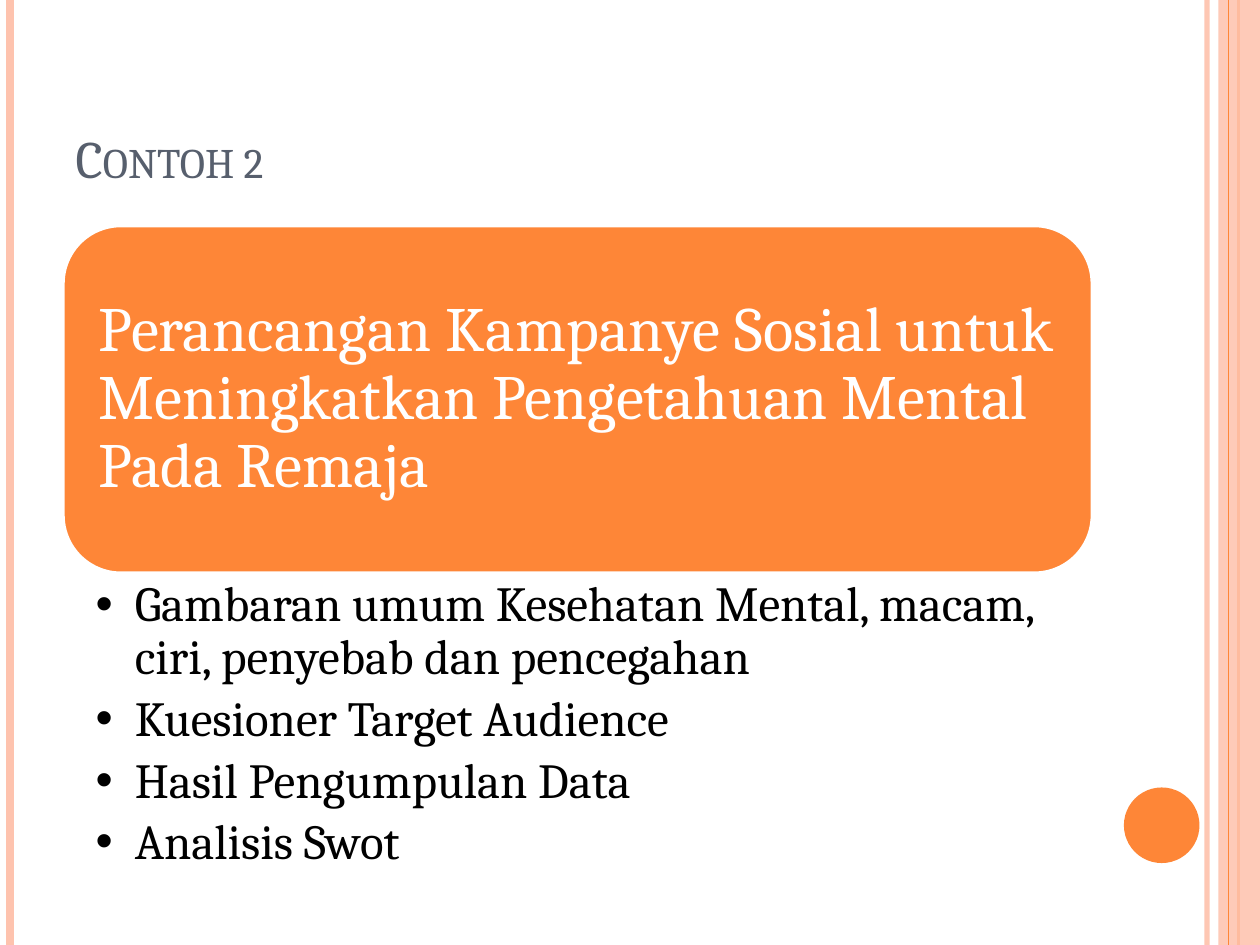
from lxml import etree
from pptx import Presentation
from pptx.dml.color import RGBColor
from pptx.enum import shapes, text
from pptx.oxml.ns import qn
from pptx.util import Inches, Pt

ORANGE = RGBColor(0xFE, 0x86, 0x37)
PEACH = RGBColor(0xFE, 0xC3, 0xAE)
SLATE = RGBColor(0x57, 0x5F, 0x6D)
WHITE = RGBColor(0xFF, 0xFF, 0xFF)
BLACK = RGBColor(0, 0, 0)

TITLE = "Contoh 2"
TOPIC = "Perancangan Kampanye Sosial untuk Meningkatkan Pengetahuan Mental Pada Remaja"
POINTS = [
    "Gambaran umum Kesehatan Mental, macam, ciri, penyebab dan pencegahan",
    "Kuesioner Target Audience",
    "Hasil Pengumpulan Data",
    "Analisis Swot",
]
LEFT, WIDTH = 0.5, 8.17

prs = Presentation()
prs.slide_width, prs.slide_height = Inches(10), Inches(7.5)
slide = prs.slides.add_slide(prs.slide_layouts[1])


def set_alpha(fill_owner, percent):
    """Make the solid colour inside the shape's fill or line partly transparent."""
    color = fill_owner.find(".//" + qn("a:srgbClr"))
    etree.SubElement(color, qn("a:alpha")).set("val", str(percent * 1000))


def write(sp, lines, size, color, anchor, insets, **para_format):
    """Fill a shape with left-aligned paragraphs of one style."""
    tf = sp.text_frame
    frame = dict(word_wrap=True, auto_size=text.MSO_AUTO_SIZE.NONE, vertical_anchor=anchor)
    sides = ("margin_left", "margin_top", "margin_right", "margin_bottom")
    frame.update(zip(sides, map(Inches, insets)))
    for name, value in frame.items():
        setattr(tf, name, value)
    tf.text = "\n".join(lines)
    for p in tf.paragraphs:
        para = dict(alignment=text.PP_ALIGN.LEFT, space_before=Pt(0), **para_format)
        for name, value in para.items():
            setattr(p, name, value)
        font = p.runs[0].font
        font.name, font.size, font.color.rgb = "Cambria", Pt(size), color


# Side stripes: x, colour, width, opacity; the band lies above the first three
stripes = [
    (9.58, PEACH, 3, 93),
    (0.08, PEACH, 4.5, 100),
    (9.83, ORANGE, 1.5, 100),
    (9.75, ORANGE, 0.75, 100),
]
for i, (x, color, width, opacity) in enumerate(stripes):
    if i == 3:
        band = slide.shapes.add_shape(
            shapes.MSO_SHAPE.RECTANGLE, Inches(9.67), 0, Inches(0.33), prs.slide_height)
        band.shadow.inherit = False
        band.fill.solid()
        band.fill.fore_color.rgb = PEACH
        band.line.fill.background()
        set_alpha(band._element.spPr, 87)
    stripe = slide.shapes.add_connector(
        shapes.MSO_CONNECTOR.STRAIGHT, Inches(x), 0, Inches(x), prs.slide_height)
    stripe.line.color.rgb, stripe.line.width = color, Pt(width)
    if opacity < 100:
        set_alpha(stripe._element.spPr, opacity)
    etree.SubElement(stripe._element.spPr, qn("a:effectLst"))

dot = slide.shapes.add_shape(
    shapes.MSO_SHAPE.OVAL, Inches(8.92), Inches(6.25), Inches(0.6), Inches(0.6))
card = slide.shapes.add_shape(
    shapes.MSO_SHAPE.ROUNDED_RECTANGLE, Inches(LEFT), Inches(1.79), Inches(WIDTH), Inches(2.76))
for sp in (dot, card):
    sp.shadow.inherit = False
    sp.fill.solid()
    sp.fill.fore_color.rgb = ORANGE
dot.line.fill.background()
card.line.color.rgb, card.line.width = WHITE, Pt(2)
write(card, [TOPIC], 36, WHITE, text.MSO_ANCHOR.MIDDLE, [0.15] * 4, line_spacing=0.9)

title, body = slide.shapes.title, slide.placeholders[1]
for sp, top, height in ((title, 0.3, 1.25), (body, 4.55, 2.49)):
    sp.left, sp.top, sp.width, sp.height = map(Inches, (LEFT, top, WIDTH, height))

write(title, [TITLE], 30, SLATE, text.MSO_ANCHOR.BOTTOM, (0.1, 0.05, 0.1, 0.05))
title.text_frame.paragraphs[0].runs[0].font._element.set("cap", "small")

write(body, POINTS, 28, BLACK, text.MSO_ANCHOR.TOP, (0.26, 0.05, 0.28, 0.05),
      line_spacing=0.9, space_after=Pt(5))
for p in body.text_frame.paragraphs:
    pPr = p._p.get_or_add_pPr()
    pPr.set("marL", str(Inches(0.31)))
    pPr.set("indent", str(Inches(-0.31)))
    etree.SubElement(pPr, qn("a:buChar")).set("char", "•")

prs.save("out.pptx")
